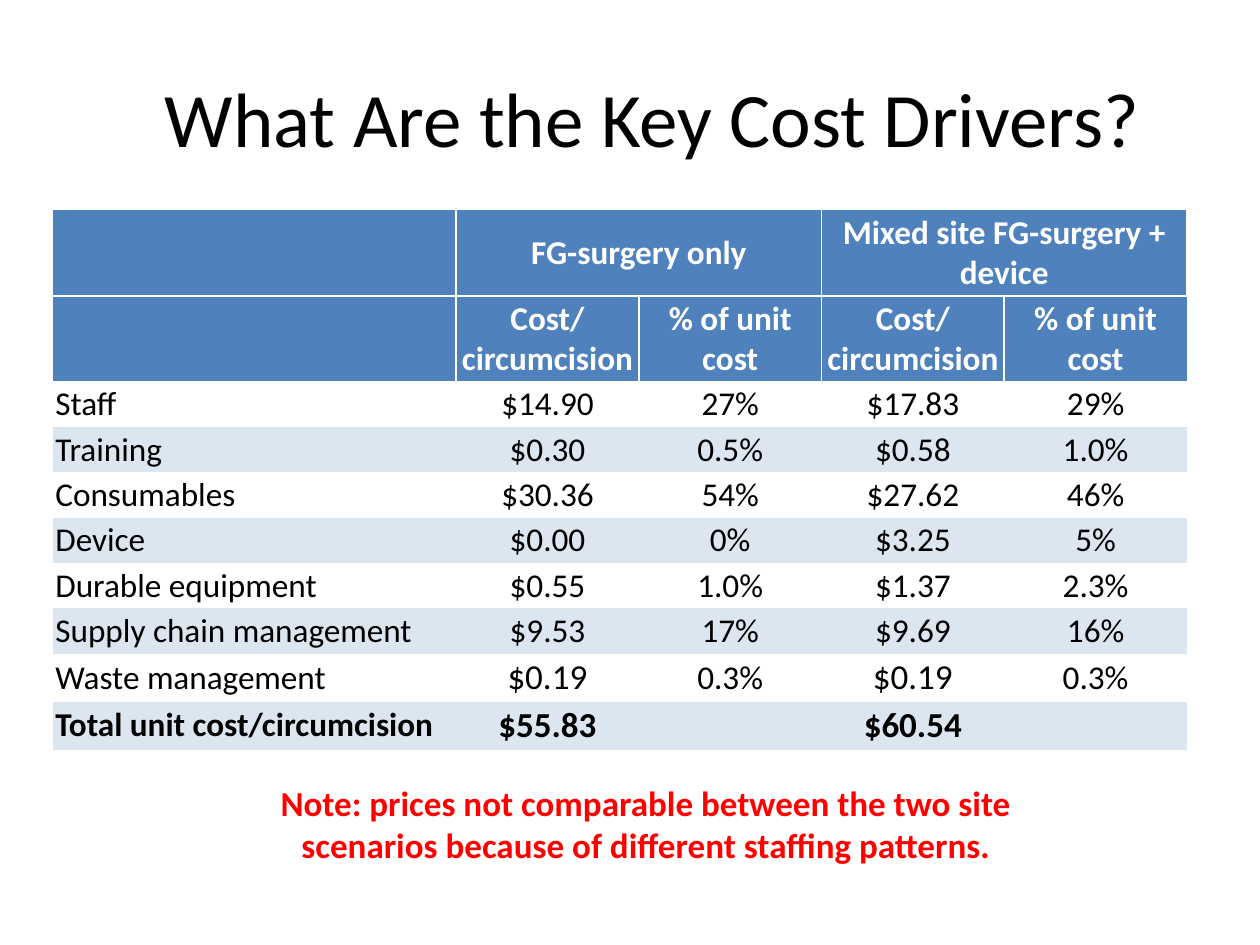
from dataclasses import dataclass

from lxml import etree
from pptx import Presentation, util as u
from pptx.dml.color import RGBColor
from pptx.enum import text
from pptx.oxml.ns import qn


@dataclass(frozen=True)
class Theme:
    font: str = "Calibri"
    title: int = 44
    body: int = 19
    large: int = 20
    black: str = "000000"
    white: str = "FFFFFF"
    red: str = "FF0000"
    header: str = "4F81BD"
    band: str = "DCE6F1"


T = Theme()
CENTER, LEFT = text.PP_ALIGN.CENTER, text.PP_ALIGN.LEFT
MIDDLE = text.MSO_ANCHOR.MIDDLE
UNIT = 0.25  # the slide is a grid of 40 columns by 30 rows
COLS, ROWS = 40, 30
PLAIN_TABLE = "{2D5ABB26-0587-4C30-8999-92F81FD0307C}"

SITES = ["FG-surgery only", "Mixed site FG-surgery + device"]
MEASURES = ["Cost/ circumcision", "% of unit cost"]
COSTS = [
    ["Staff", "$14.90", "27%", "$17.83", "29%"],
    ["Training", "$0.30", "0.5%", "$0.58", "1.0%"],
    ["Consumables", "$30.36", "54%", "$27.62", "46%"],
    ["Device", "$0.00", "0%", "$3.25", "5%"],
    ["Durable equipment", "$0.55", "1.0%", "$1.37", "2.3%"],
    ["Supply chain management", "$9.53", "17%", "$9.69", "16%"],
    ["Waste management", "$0.19", "0.3%", "$0.19", "0.3%"],
    ["Total unit cost/circumcision", "$55.83", "", "$60.54", ""],
]


def grid(*cells):
    return [u.Inches(c * UNIT) for c in cells]


def write(tf, words, size, color, bold=False, align=CENTER):
    p = tf.paragraphs[0]
    p.alignment = align
    r = p.add_run()
    r.text = words
    fmt = {"name": T.font, "size": u.Pt(size), "bold": bold}
    for key, value in fmt.items():
        setattr(r.font, key, value)
    r.font.color.rgb = RGBColor.from_string(color)


def add_title(s, words):
    sp = s.shapes.title
    sp.left, sp.top, sp.width, sp.height = grid(4, 1.2, 34, 5)
    sp.text_frame.vertical_anchor = MIDDLE
    write(sp.text_frame, words, T.title, T.black)


def add_note(s, words):
    tf = s.shapes.add_textbox(*grid(8, 24.6, 25, 3.08)).text_frame
    tf.word_wrap = True
    write(tf, words, T.large, T.red, bold=True)


def border(cell, sides):
    """White 1 pt lines; sides are given in the order L, R, T, B."""
    tc_pr = cell._tc.get_or_add_tcPr()
    for i, side in enumerate(sides):
        ln = etree.Element(qn(f"a:ln{side}"), w=str(u.Pt(1)))
        fill = etree.SubElement(ln, qn("a:solidFill"))
        etree.SubElement(fill, qn("a:srgbClr"), val=T.white)
        tc_pr.insert(i, ln)


def style_cell(cell, fill):
    for side in ("left", "right", "top", "bottom"):
        setattr(cell, f"margin_{side}", u.Inches(0.02))
    cell.vertical_anchor = MIDDLE
    if fill:
        cell.fill.solid()
        cell.fill.fore_color.rgb = RGBColor.from_string(fill)
    else:
        cell.fill.background()


def fill_header(tbl):
    rows = [["", SITES[0], "", SITES[1], ""], [""] + MEASURES * 2]
    for i, row in enumerate(rows):
        for j, words in enumerate(row):
            cell = tbl.cell(i, j)
            style_cell(cell, T.header)
            sides = ("L" if j else "") + ("R" if j < len(row) - 1 else "")
            border(cell, sides + "BT"[i])
            if words:
                write(cell.text_frame, words, T.body, T.white, bold=True)
    for j in (1, 3):
        tbl.cell(0, j).merge(tbl.cell(0, j + 1))


def fill_costs(tbl):
    for i, row in enumerate(COSTS):
        total = i == len(COSTS) - 1
        for j, words in enumerate(row):
            cell = tbl.cell(i + 2, j)
            style_cell(cell, T.band if i % 2 else None)
            # costs in the last two rows are slightly larger
            large = i >= len(COSTS) - 2 and j in (1, 3)
            if words:
                write(cell.text_frame, words, T.large if large else T.body,
                      T.black, total, CENTER if j else LEFT)


def add_cost_table(s):
    widths = [12.8] + [5.8] * 4
    heights = [2.72] * 2 + [1.44] * 6 + [1.5] * 2
    box = grid(1.68, 6.68, sum(widths), sum(heights))
    tbl = s.shapes.add_table(len(heights), len(widths), *box).table
    tbl.first_row = tbl.horz_banding = False
    tbl._tbl.tblPr.find(qn("a:tableStyleId")).text = PLAIN_TABLE
    for col, width in zip(tbl.columns, grid(*widths)):
        col.width = width
    for row, height in zip(tbl.rows, grid(*heights)):
        row.height = height
    fill_header(tbl)
    fill_costs(tbl)


def main():
    prs = Presentation()
    prs.slide_width, prs.slide_height = grid(COLS, ROWS)
    s = prs.slides.add_slide(prs.slide_layouts[5])  # title only
    add_title(s, "What Are the Key Cost Drivers? ")
    add_cost_table(s)
    add_note(s, "Note: prices not comparable between the two site "
                "scenarios because of different staffing patterns.")
    prs.save("out.pptx")


if __name__ == "__main__":
    main()
